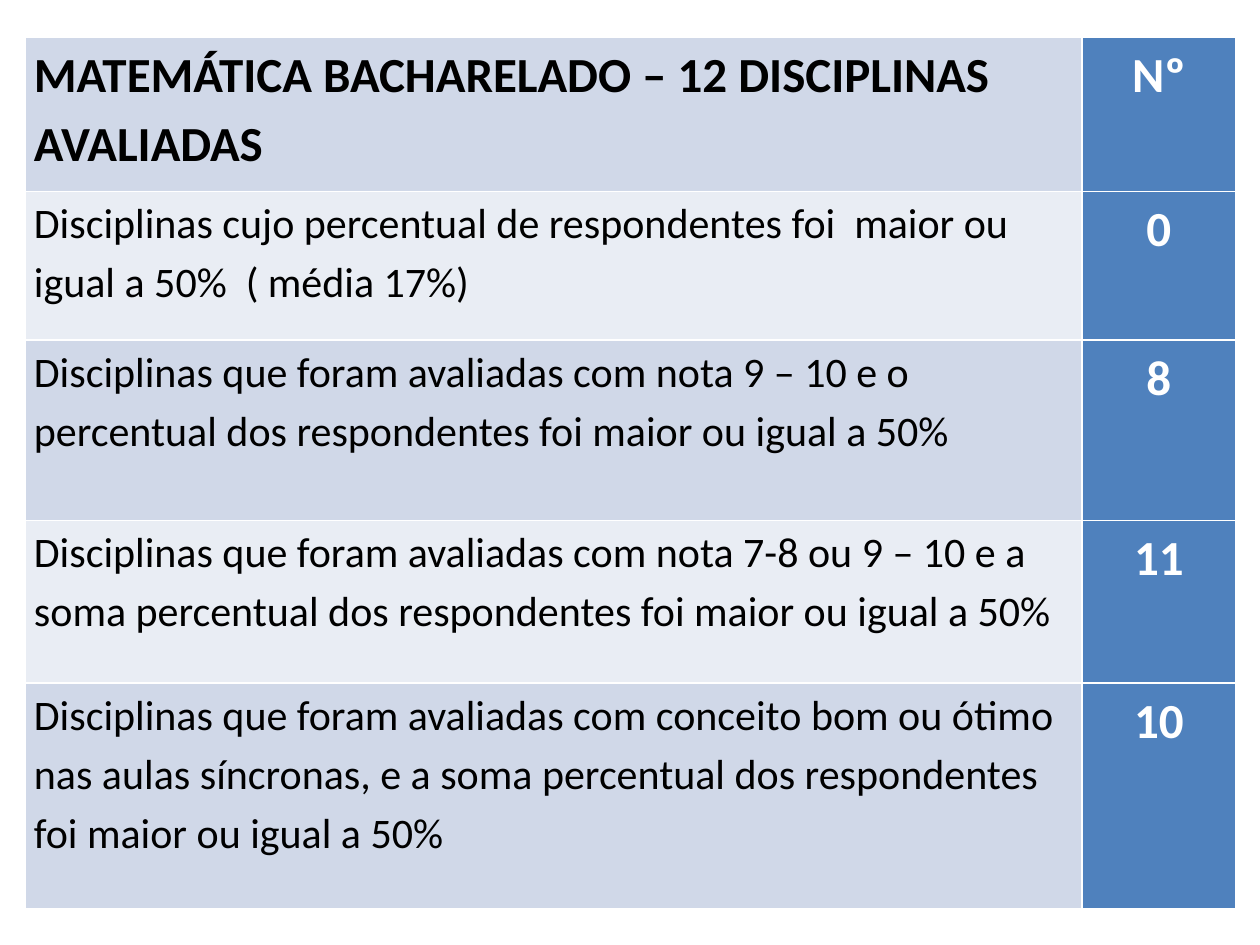
from lxml import etree
from pptx import Presentation
from pptx.dml.color import RGBColor
from pptx.enum.text import PP_ALIGN
from pptx.oxml.ns import qn
from pptx.util import Pt

LEFT, CENTER = PP_ALIGN.LEFT, PP_ALIGN.CENTER
BLACK = RGBColor(0x00, 0x00, 0x00)
WHITE = RGBColor(0xFF, 0xFF, 0xFF)
BLUE = RGBColor(0x4F, 0x81, 0xBD)
BANDS = (RGBColor(0xD0, 0xD8, 0xE8), RGBColor(0xE9, 0xED, 0xF4))
FONT = "Calibri"
BLANK_LAYOUT = 6

RESULTS = [
    ("MATEMÁTICA BACHARELADO – 12 DISCIPLINAS AVALIADAS", "Nº", 88.3),
    ("Disciplinas cujo percentual de respondentes foi  maior ou igual a 50%  ( média 17%)", "0", 85.1),
    ("Disciplinas que foram avaliadas com nota 9 – 10 e o percentual dos respondentes "
     "foi maior ou igual a 50%", "8", 102.9),
    ("Disciplinas que foram avaliadas com nota 7-8 ou 9 – 10 e a soma percentual dos "
     "respondentes foi maior ou igual a 50%", "11", 93.1),
    ("Disciplinas que foram avaliadas com conceito bom ou ótimo nas aulas síncronas, "
     "e a soma percentual dos respondentes foi maior ou igual a 50%", "10", 128.8),
]


def add_borders(cell, color, width):
    """Draw a solid line on all four sides of a cell."""
    properties = cell._tc.get_or_add_tcPr()
    for side in ("a:lnL", "a:lnR", "a:lnT", "a:lnB"):
        line = etree.SubElement(properties, qn(side), w=str(Pt(width)))
        fill = etree.SubElement(line, qn("a:solidFill"))
        etree.SubElement(fill, qn("a:srgbClr"), val=str(color))


def format_cell(cell, text, fill, color, size, bold, alignment):
    """Write and style one table cell."""
    add_borders(cell, WHITE, 1)
    cell.fill.solid()
    cell.fill.fore_color.rgb = fill
    cell.margin_left = cell.margin_right = Pt(5.2)
    cell.margin_top = cell.margin_bottom = Pt(0)
    paragraph = cell.text_frame.paragraphs[0]
    paragraph.text = text
    paragraph.alignment = alignment
    paragraph.line_spacing = 1.15
    font = paragraph.runs[0].font
    font.name = FONT
    font.size = Pt(size)
    font.bold = bold
    font.color.rgb = color


def add_results_table(slide, left, top, width, count_width):
    """Place the course evaluation table with its count column on the right."""
    height = sum(row_height for _, _, row_height in RESULTS)
    table = slide.shapes.add_table(
        len(RESULTS), 2, Pt(left), Pt(top), Pt(width), Pt(height)).table
    table.columns[0].width = Pt(width - count_width)
    table.columns[1].width = Pt(count_width)
    for index, (criterion, count, row_height) in enumerate(RESULTS):
        is_header = index == 0
        table.rows[index].height = Pt(row_height)
        format_cell(table.cell(index, 0), criterion, BANDS[index % 2], BLACK,
                    28 if is_header else 24, is_header, LEFT)
        format_cell(table.cell(index, 1), count, BLUE, WHITE, 28, True, CENTER)


def main():
    """Build and save the slide."""
    presentation = Presentation()
    presentation.slide_width = Pt(720)
    presentation.slide_height = Pt(540)
    slide = presentation.slides.add_slide(presentation.slide_layouts[BLANK_LAYOUT])
    add_results_table(slide, left=14.2, top=21, width=692, count_width=88)
    presentation.save("out.pptx")


if __name__ == "__main__":
    main()
